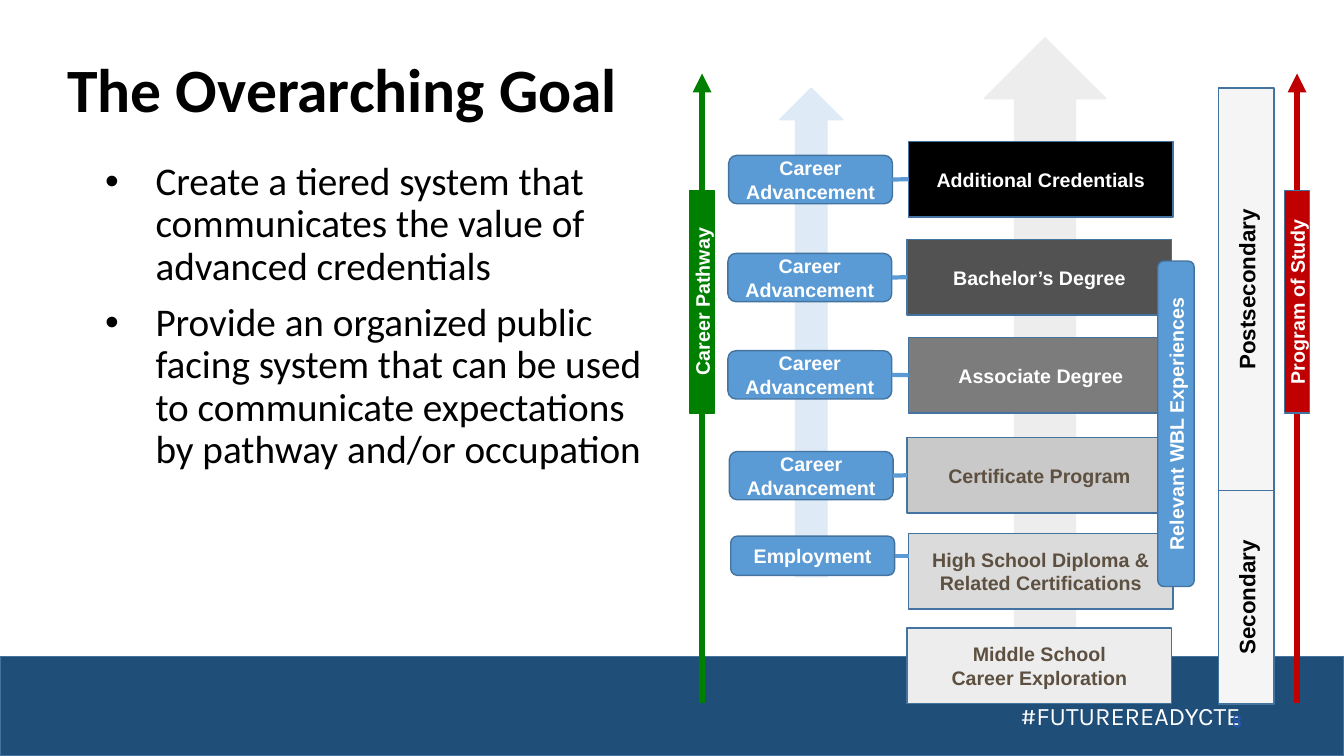
"""Build the slide on the overarching goal of a tiered credential system."""
from dataclasses import dataclass

from lxml import etree
from pptx import Presentation
from pptx.dml.color import RGBColor
from pptx.enum.shapes import MSO_CONNECTOR, MSO_SHAPE
from pptx.enum.text import MSO_ANCHOR, MSO_AUTO_SIZE, PP_ALIGN
from pptx.oxml.ns import qn
from pptx.util import Pt

RECT = MSO_SHAPE.RECTANGLE
ROUND = MSO_SHAPE.ROUNDED_RECTANGLE
ARROW = MSO_SHAPE.UP_ARROW
STRAIGHT = MSO_CONNECTOR.STRAIGHT
MIDDLE = MSO_ANCHOR.MIDDLE
FIXED = MSO_AUTO_SIZE.NONE
LEFT, CENTER, RIGHT = PP_ALIGN.LEFT, PP_ALIGN.CENTER, PP_ALIGN.RIGHT


@dataclass(frozen=True)
class Theme:
    """Colours, fonts and type sizes of the slide."""
    navy: str = "1F4E79"
    edge: str = "43739E"
    blue: str = "5B9BD5"
    pale: str = "DEEBF7"
    mist: str = "EDEDED"
    panel: str = "F5F5F5"
    green: str = "008000"
    red: str = "C00000"
    brown: str = "5D5040"
    link: str = "2758BC"
    black: str = "000000"
    white: str = "FFFFFF"
    main: str = "Calibri"
    sans: str = "Arial"
    tag: str = "Karla"
    title: int = 44
    body: int = 28
    mark: int = 18
    stage: int = 16
    label: int = 14
    small: int = 12


THEME = Theme()

RUNGS = [
    (129, 101, "Additional Credentials", "000000", THEME.white),
    (128, 171, "Bachelor’s Degree", "525252", THEME.white),
    (129, 241, "Associate Degree", "7C7C7C", THEME.white),
    (128, 312.5, "Certificate Program", "C9C9C9", THEME.brown),
    (129, 381, "High School Diploma & Related Certifications", "DBDBDB", THEME.brown),
    (128, 448.5, "Middle School\nCareer Exploration", THEME.mist, THEME.brown),
]
JOBS = [
    (0.5, 111, 34.5, "Career Advancement"),
    (0, 181, 34.5, "Career Advancement"),
    (0, 250.5, 34.5, "Career Advancement"),
    (1, 322.5, 34.5, "Career Advancement"),
    (2, 383, 28, "Employment"),
]
GOALS = [
    "Create a tiered system that communicates the value of advanced credentials",
    "Provide an organized public facing system that can be used to communicate "
    "expectations by pathway and/or occupation",
]


def write(frame, text, size, color, font, bold=False, align=LEFT):
    """Fill a text frame and format its runs."""
    frame.text = text
    for para in frame.paragraphs:
        para.alignment = align
        for run in para.runs:
            run.font.size = Pt(size)
            run.font.name = font
            run.font.bold = bold
            run.font.color.rgb = RGBColor.from_string(color)


def block(slide, kind, box, fill, edge=THEME.edge):
    """Add a filled preset shape with a thin edge."""
    shape = slide.shapes.add_shape(kind, *map(Pt, box))
    shape.shadow.inherit = False
    shape.fill.solid()
    shape.fill.fore_color.rgb = RGBColor.from_string(fill)
    shape.line.color.rgb = RGBColor.from_string(edge)
    shape.line.width = Pt(1)
    return shape


def label(shape, text, color=THEME.white, size=THEME.label, upright=False):
    """Centre a bold label in a shape, turned to read upwards if asked."""
    frame = shape.text_frame
    frame.margin_left = frame.margin_right = 0
    frame.margin_top = frame.margin_bottom = 0
    frame.word_wrap = True
    frame.vertical_anchor = MIDDLE
    write(frame, text, size, color, THEME.sans, True, CENTER)
    if upright:
        frame._txBody.bodyPr.set("vert", "vert270")


def stroke(slide, ends, color, width):
    """Add a straight connector without a shadow."""
    line = slide.shapes.add_connector(STRAIGHT, *ends)
    line.line.color.rgb = RGBColor.from_string(color)
    line.line.width = Pt(width)
    etree.SubElement(line._element.spPr, qn("a:effectLst"))
    return line


def add_band(slide, box):
    """Draw the footer band with its hashtag and page number."""
    x, y, w, h = box
    block(slide, RECT, box, THEME.navy)
    tag = slide.shapes.add_textbox(Pt(x + 722), Pt(y + 28), Pt(172), Pt(29))
    write(tag.text_frame, "#FUTUREREADYCTE", THEME.mark, THEME.white, THEME.tag)
    page = slide.shapes.add_textbox(Pt(x + 678), Pt(y + 31.5), Pt(216), Pt(29))
    page.text_frame.word_wrap = True
    page.text_frame.vertical_anchor = MIDDLE
    write(page.text_frame, "8", THEME.small, THEME.link, THEME.sans, align=RIGHT)


def add_title(slide, box):
    """Place and format the title."""
    title = slide.shapes.title
    title.left, title.top, title.width, title.height = map(Pt, box)
    frame = title.text_frame
    frame.auto_size = FIXED
    frame.vertical_anchor = MIDDLE
    write(frame, "The Overarching Goal", THEME.title, THEME.black, THEME.main, True)
    frame.paragraphs[0].line_spacing = 0.9


def add_goals(slide, box):
    """Write the bulleted goals."""
    frame = slide.shapes.add_textbox(*map(Pt, box)).text_frame
    frame.word_wrap = True
    write(frame, "\n".join(GOALS), THEME.body, THEME.black, THEME.main)
    for i, para in enumerate(frame.paragraphs):
        props = para._p.get_or_add_pPr()
        props.set("marL", str(Pt(54)))
        props.set("indent", str(-Pt(36)))
        etree.SubElement(props, qn("a:buFont")).set("typeface", THEME.sans)
        etree.SubElement(props, qn("a:buChar")).set("char", "•")
        para.line_spacing = 0.9
        para.space_before = Pt(10 if i else 0)


def add_rail(slide, box, text, color, edge):
    """Draw an upward arrow with an upright label across it."""
    x, y, w, h = box
    mid = Pt(x + w / 2)
    line = stroke(slide, (mid, Pt(y + h), mid, Pt(y)), color, 4.5)
    etree.SubElement(line.line._get_or_add_ln(), qn("a:tailEnd")).set("type", "triangle")
    label(block(slide, RECT, (x, y + 83.5, w, 159), color, edge), text, upright=True)


def add_stages(slide, box):
    """Stack the two school stages in one column."""
    x, y, w, h = box
    split = 287.5
    for text, top, tall in (("Postsecondary", y, split), ("Secondary", y + split, h - split)):
        stage = block(slide, RECT, (x, top, w, tall), THEME.panel)
        label(stage, text, THEME.black, THEME.stage, True)


def add_ladder(slide, box):
    """Draw the credential ladder and the jobs joined to its rungs."""
    x, y, w, h = box
    block(slide, ARROW, (x + 37, y + 63, 45, 349), THEME.pale, THEME.pale)
    block(slide, ARROW, (x + 183, y + 27, 87, 475), THEME.mist, THEME.mist)
    steps = []
    for left, top, text, fill, color in RUNGS:
        step = block(slide, RECT, (x + left, y + top, 189, 54), fill)
        label(step, text, color)
        steps.append(step)
    work = block(slide, ROUND, (x + 307, y + 186.5, 26, 232.5), THEME.blue)
    label(work, "Relevant WBL Experiences", upright=True)
    for (left, top, tall, text), step in zip(JOBS, steps):
        job = block(slide, ROUND, (x + left, y + top, 117, tall), THEME.blue)
        label(job, text)
        mid = job.top + job.height // 2
        line = stroke(slide, (job.left + job.width, mid, step.left, mid), THEME.blue, 3)
        line.begin_connect(job, 3)
        if abs(step.top + step.height // 2 - mid) < Pt(2):
            line.end_connect(step, 1)


def main():
    """Build and save the deck."""
    deck = Presentation()
    deck.slide_width, deck.slide_height = Pt(960), Pt(540)
    slide = deck.slides.add_slide(deck.slide_layouts[5])
    add_band(slide, (0, 469, 960, 71))
    add_title(slide, (41, 21, 456, 90))
    add_goals(slide, (50, 112, 433, 401))
    add_stages(slide, (870.5, 63, 39.5, 440))
    add_rail(slide, (917.5, 52.5, 18, 450), "Program of Study", THEME.red, THEME.edge)
    add_rail(slide, (492.5, 52.5, 18, 450), "Career Pathway", THEME.green, THEME.green)
    add_ladder(slide, (520, 0, 333, 503))
    deck.save("out.pptx")


if __name__ == "__main__":
    main()
